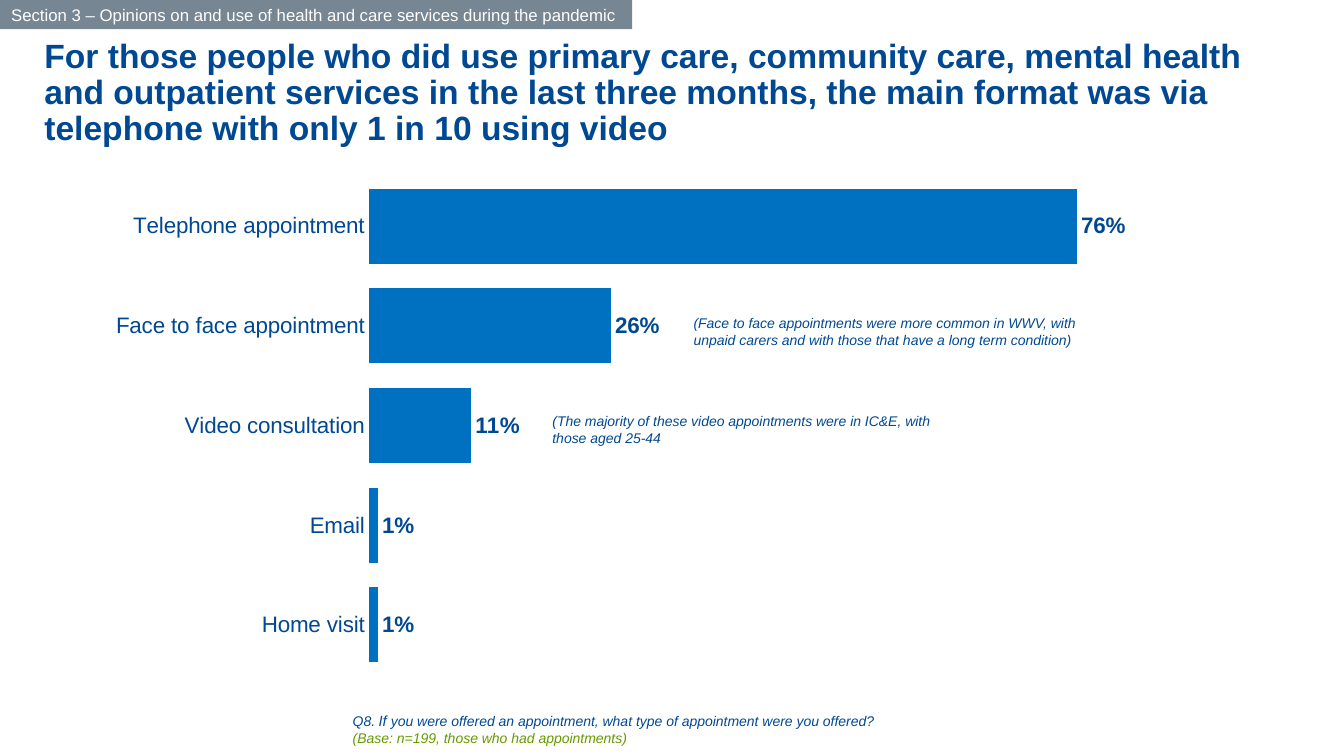
from lxml import etree
from pptx import Presentation
from pptx.chart.data import CategoryChartData
from pptx.dml.color import RGBColor
from pptx.enum.chart import XL_CHART_TYPE, XL_LABEL_POSITION, XL_TICK_MARK
from pptx.enum.shapes import MSO_SHAPE
from pptx.enum.text import MSO_ANCHOR, MSO_AUTO_SIZE, PP_ALIGN
from pptx.oxml.ns import qn
from pptx.util import Inches, Pt

COLOURS = {
    "navy": "004992",
    "bar": "0070C0",
    "banner": "768692",
    "base": "669900",
    "white": "FFFFFF",
}
FONT = "Arial"

# Share of people by appointment format, from the bottom bar up
FORMATS = {
    "Home visit": 0.01,
    "Email": 0.01,
    "Video consultation": 0.11,
    "Face to face appointment": 0.26,
    "Telephone appointment": 0.76,
}
PLOT_AREA = {"x": 0.317, "y": 0.015, "w": 0.655, "h": 0.946}


def colour(name):
    return RGBColor.from_string(COLOURS[name])


def style_font(font, size, name="navy", bold=False, italic=False):
    font.name = FONT
    font.size = Pt(size)
    font.bold = bold
    font.italic = italic
    font.color.rgb = colour(name)


def add_run(paragraph, text, size, name="navy", bold=False, italic=False):
    run = paragraph.add_run()
    run.text = text
    style_font(run.font, size, name, bold, italic)


def set_title(slide, text):
    title = slide.shapes.title
    title.left, title.top = Inches(0.2), Inches(0.34)
    title.width, title.height = Inches(12.71), Inches(1.33)
    frame = title.text_frame
    frame.margin_left = frame.margin_right = Inches(0.24)
    frame.vertical_anchor = MSO_ANCHOR.TOP
    frame.auto_size = MSO_AUTO_SIZE.NONE
    frame.word_wrap = True
    paragraph = frame.paragraphs[0]
    paragraph.alignment = PP_ALIGN.LEFT
    paragraph.line_spacing = 0.9
    add_run(paragraph, text, 24, bold=True)


def add_banner(slide, text):
    banner = slide.shapes.add_shape(
        MSO_SHAPE.RECTANGLE, 0, 0, Inches(6.27), Inches(0.29))
    banner.shadow.inherit = False
    banner.fill.solid()
    banner.fill.fore_color.rgb = colour("banner")
    banner.line.fill.background()
    frame = banner.text_frame
    frame.vertical_anchor = MSO_ANCHOR.MIDDLE
    paragraph = frame.paragraphs[0]
    paragraph.alignment = PP_ALIGN.CENTER
    add_run(paragraph, text, 12, "white")


def add_note(slide, left, top, width, height, lines):
    """Each line is a list of (text, size, colour name) runs."""
    note = slide.shapes.add_textbox(
        Inches(left), Inches(top), Inches(width), Inches(height))
    frame = note.text_frame
    frame.word_wrap = True
    for index, line in enumerate(lines):
        paragraph = frame.paragraphs[0] if index == 0 else frame.add_paragraph()
        for text, size, name in line:
            add_run(paragraph, text, size, name, italic=True)


def fix_plot_area(chart):
    plot_area = chart._chartSpace.chart.plotArea
    for old in plot_area.findall(qn("c:layout")):
        plot_area.remove(old)
    layout = etree.Element(qn("c:layout"))
    manual = etree.SubElement(layout, qn("c:manualLayout"))
    settings = {"layoutTarget": "inner", "xMode": "edge", "yMode": "edge", **PLOT_AREA}
    for tag, value in settings.items():
        etree.SubElement(manual, qn(f"c:{tag}")).set("val", str(value))
    plot_area.insert(0, layout)


def add_format_chart(slide):
    data = CategoryChartData(number_format="0%")
    data.categories = list(FORMATS)
    data.add_series("Series 1", list(FORMATS.values()))
    chart = slide.shapes.add_chart(
        XL_CHART_TYPE.BAR_CLUSTERED, Inches(0.08), Inches(1.67),
        Inches(11.29), Inches(5.23), data).chart
    chart.has_legend = False
    chart.has_title = False
    style_font(chart.font, 10)
    fix_plot_area(chart)

    # Axes
    formats_axis = chart.category_axis
    formats_axis.major_tick_mark = XL_TICK_MARK.NONE
    formats_axis.format.line.fill.background()
    style_font(formats_axis.tick_labels.font, 16)
    share_axis = chart.value_axis
    share_axis.minimum_scale = 0
    share_axis.maximum_scale = 0.8
    share_axis.has_major_gridlines = False
    share_axis.visible = False

    # Bars and their labels
    plot = chart.plots[0]
    plot.gap_width = 33
    plot.vary_by_categories = False
    bars = plot.series[0]
    bars.format.fill.solid()
    bars.format.fill.fore_color.rgb = colour("bar")
    labels = bars.data_labels
    labels.show_value = True
    labels.number_format = "0%"
    labels.number_format_is_linked = False
    labels.position = XL_LABEL_POSITION.OUTSIDE_END
    style_font(labels.font, 16, bold=True)


def main():
    prs = Presentation()
    prs.slide_width, prs.slide_height = Inches(13.33), Inches(7.5)
    slide = prs.slides.add_slide(prs.slide_layouts[5])

    # Heading
    set_title(slide, "For those people who did use primary care, community care, "
                     "mental health and outpatient services in the last three months, "
                     "the main format was via telephone with only 1 in 10 using video")
    add_banner(slide, "Section 3 – Opinions on and use of health and care services "
                      "during the pandemic ")

    # Chart with remarks beside two of the bars
    add_format_chart(slide)
    add_note(slide, 6.78, 3.07, 4.09, 0.44, [[
        ("(Face to face appointments were more common in WWV, with unpaid carers "
         "and with those that have a long term condition)", 10, "navy")]])
    add_note(slide, 5.38, 4.04, 4.09, 0.44, [[
        ("(The majority of these video appointments were in IC&E, with those "
         "aged 25-44", 10, "navy")]])

    # Survey question and base
    add_note(slide, 3.4, 7.01, 6.28, 0.45, [
        [("Q8.", 10, "navy"), (" ", 9, "navy"), ("If ", 10.5, "navy"),
         ("you were offered an appointment, what type of appointment were you "
          "offered?", 10, "navy")],
        [("(Base: n=199, those who had appointments)", 10, "base")],
    ])

    prs.save("out.pptx")


if __name__ == "__main__":
    main()
